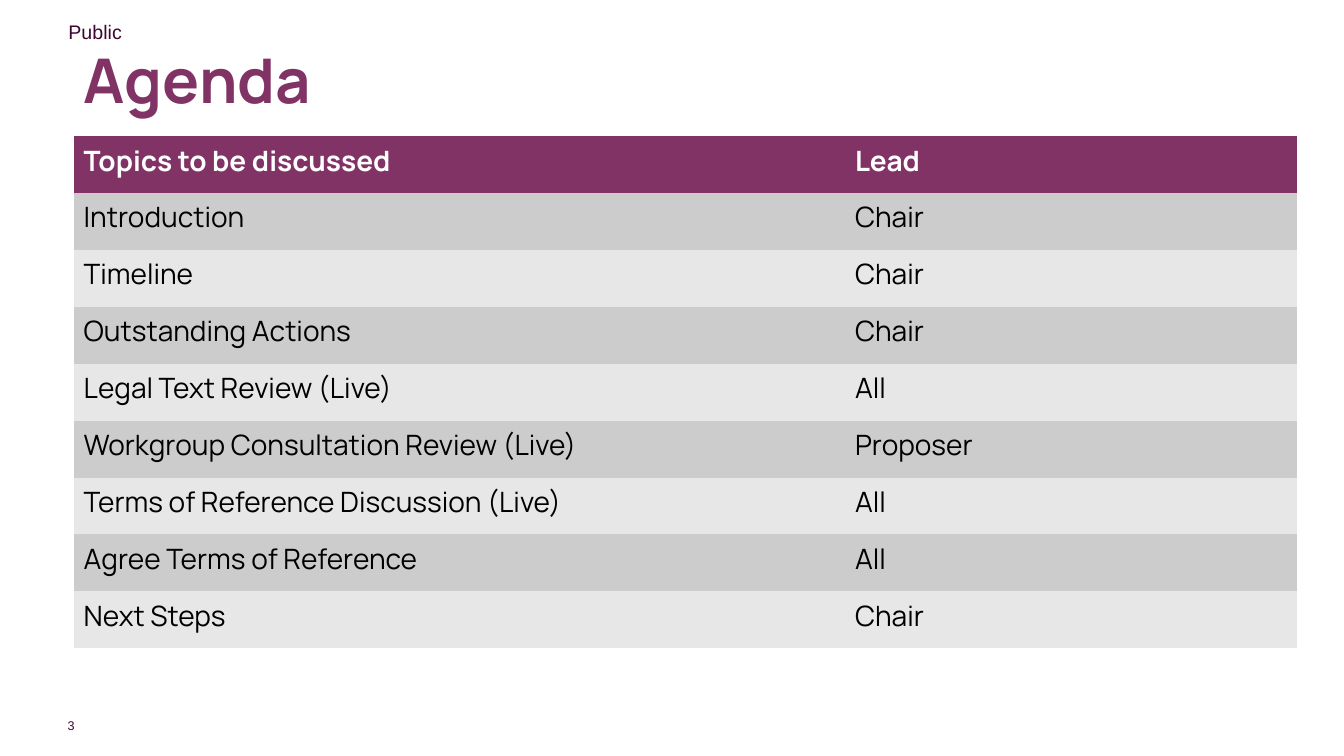
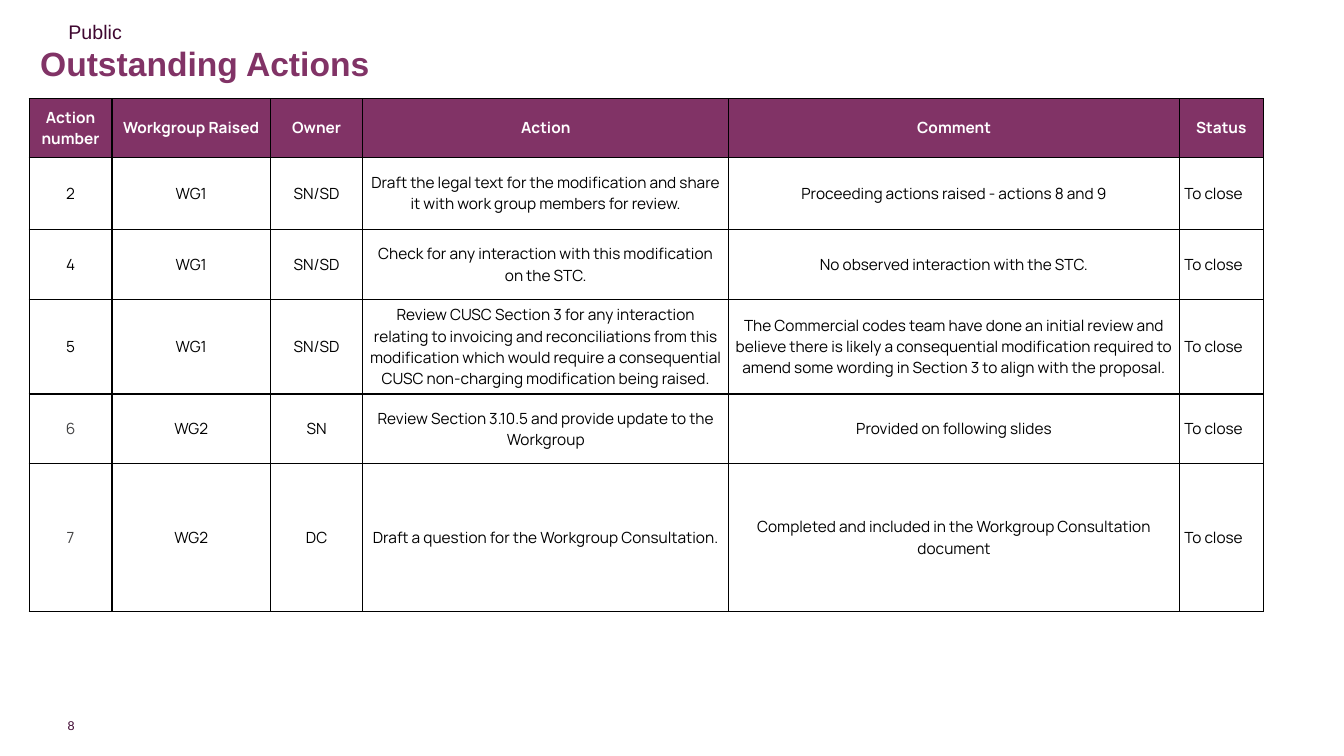
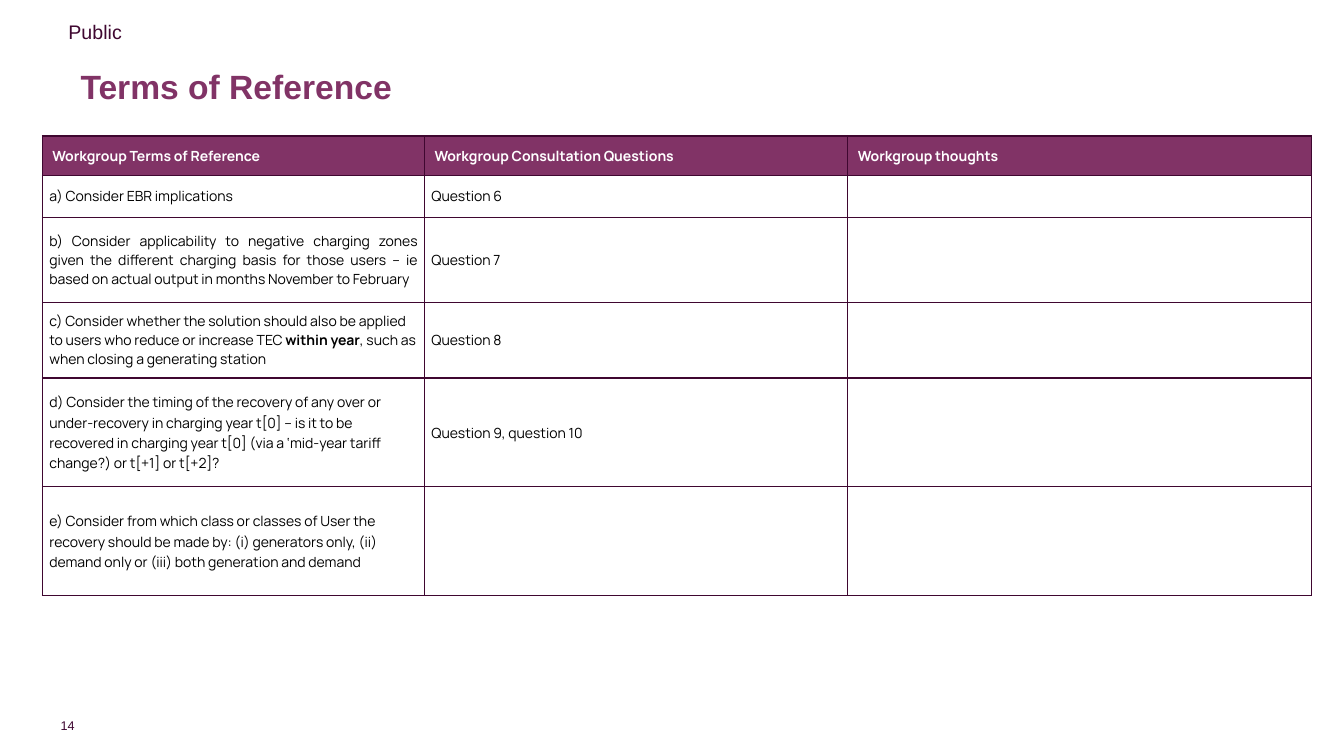
import dataclasses
import typing

import lxml.etree
import pptx
import pptx.dml.color
import pptx.enum.text
import pptx.oxml.ns
import pptx.util

Pt = pptx.util.Pt
Align = pptx.enum.text.PP_ALIGN
Anchor = pptx.enum.text.MSO_ANCHOR
AutoSize = pptx.enum.text.MSO_AUTO_SIZE
Values = dict[str, typing.Any]

# Shared palette, fonts and page size
PLUM, DEEP_PLUM, NUMBER_PLUM = "813366", "3F0730", "3F0731"
BLACK, WHITE, SLATE = "000000", "FFFFFF", "454546"
STRIPES = ("CCCCCC", "E7E7E7")
SANS, BRAND = "Arial", "Manrope"
PAGE_WIDTH, PAGE_HEIGHT = pptx.util.Inches(13.33), pptx.util.Inches(7.5)
NO_STYLE_NO_GRID = "{2D5ABB26-0587-4C30-8999-92F81FD0307C}"


@dataclasses.dataclass(frozen=True)
class Area:
    """A rectangle in percent of the slide's width and height."""
    left: float
    top: float
    width: float
    height: float


@dataclasses.dataclass(frozen=True)
class Look:
    """How a piece of text, or a table cell, is set."""
    size: float
    font: str = BRAND
    colour: str = BLACK
    bold: bool = False
    fill: str | None = None
    inset: tuple[float, float] = (0.1, 0.05)
    anchor: Anchor = Anchor.MIDDLE
    paragraph: Values = dataclasses.field(default_factory=dict)


@dataclasses.dataclass(frozen=True)
class Grid:
    """A table: corner, columns and rows in percent of the slide."""
    left: float
    top: float
    columns: list[float]
    rows: list[float]
    texts: list[tuple[str, ...]]
    look: typing.Callable[[int, int], Look]
    border: str | None = None


@dataclasses.dataclass(frozen=True)
class Page:
    number: int
    title: str
    title_area: Area
    title_look: Look
    grid: Grid


# Helpers
def across(share: float) -> int:
    return round(PAGE_WIDTH * share / 100)


def down(share: float) -> int:
    return round(PAGE_HEIGHT * share / 100)


def rgb(colour: str) -> pptx.dml.color.RGBColor:
    return pptx.dml.color.RGBColor.from_string(colour)


def assign(target: typing.Any, values: Values) -> None:
    for name, value in values.items():
        setattr(target, name, value)


def write(paragraph: typing.Any, text: str, look: Look) -> None:
    """Write text; parts between ** marks are bold."""
    assign(paragraph, look.paragraph)
    for index, part in enumerate(text.split("**")):
        run = paragraph.add_run()
        run.text = part
        assign(run.font, {"name": look.font, "size": Pt(look.size),
                          "bold": look.bold or index % 2 == 1})
        run.font.color.rgb = rgb(look.colour)


def margins(look: Look) -> Values:
    side, end = (pptx.util.Inches(inset) for inset in look.inset)
    return {"margin_left": side, "margin_right": side,
            "margin_top": end, "margin_bottom": end}


def add_text(slide: typing.Any, area: Area, text: str, look: Look,
             frame_values: Values) -> None:
    box = slide.shapes.add_textbox(across(area.left), down(area.top),
                                   across(area.width), down(area.height))
    assign(box.text_frame, {"word_wrap": True, "vertical_anchor": look.anchor,
                            **margins(look), **frame_values})
    write(box.text_frame.paragraphs[0], text, look)


def add_borders(cell: typing.Any, colour: str) -> None:
    qn = pptx.oxml.ns.qn
    properties = cell._tc.get_or_add_tcPr()
    for side in ("a:lnL", "a:lnR", "a:lnT", "a:lnB"):
        line = lxml.etree.SubElement(properties, qn(side), w=str(Pt(1)))
        solid = lxml.etree.SubElement(line, qn("a:solidFill"))
        lxml.etree.SubElement(solid, qn("a:srgbClr"), val=colour)


def add_grid(slide: typing.Any, grid: Grid) -> None:
    frame = slide.shapes.add_table(
        len(grid.rows), len(grid.columns), across(grid.left), down(grid.top),
        across(sum(grid.columns)), down(sum(grid.rows)))
    table = frame.table
    assign(table, {"first_row": False, "horz_banding": False})
    for style in table._tbl.iter(pptx.oxml.ns.qn("a:tableStyleId")):
        style.text = NO_STYLE_NO_GRID
    for column, share in zip(table.columns, grid.columns):
        column.width = across(share)
    for row, share in zip(table.rows, grid.rows):
        row.height = down(share)
    for r, texts in enumerate(grid.texts):
        for c, text in enumerate(texts):
            cell, look = table.cell(r, c), grid.look(r, c)
            assign(cell, {"vertical_anchor": look.anchor, **margins(look)})
            if grid.border:
                add_borders(cell, grid.border)
            if look.fill:
                cell.fill.solid()
                cell.fill.fore_color.rgb = rgb(look.fill)
            if text:
                write(cell.text_frame.paragraphs[0], text, look)


# Cell rules of the three tables
HEADER: Values = {"colour": WHITE, "bold": True, "fill": PLUM}


def agenda_look(row: int, column: int) -> Look:
    body = Look(20, anchor=Anchor.TOP, fill=STRIPES[(row + 1) % 2])
    return body if row else dataclasses.replace(body, **HEADER)


def actions_look(row: int, column: int) -> Look:
    centred = Look(11, inset=(0.05, 0.05), paragraph={"alignment": Align.CENTER})
    if row == 0:
        return dataclasses.replace(centred, **HEADER)
    if column == 5:
        return dataclasses.replace(centred, paragraph={"alignment": Align.LEFT})
    if column == 0 and row >= 4:
        return dataclasses.replace(centred, colour=SLATE)
    return centred


def terms_look(row: int, column: int) -> Look:
    if row == 0:
        return Look(10, paragraph={"alignment": Align.JUSTIFY}, **HEADER)
    if row <= 3:
        alignment = Align.JUSTIFY if row < 3 else Align.LEFT
        setting = {"alignment": alignment, "space_after": Pt(6)}
    else:
        setting = {"line_spacing": 1.07, "space_after": Pt(8)}
    return Look(10, inset=(0.07, 0), paragraph=setting)


# Content
AGENDA = Grid(5.48, 18, [57.39, 33.61], [7.53] * 9, [
    ("Topics to be discussed", "Lead"),
    ("Introduction", "Chair"),
    ("Timeline", "Chair"),
    ("Outstanding Actions", "Chair"),
    ("Legal Text Review (Live)", "All"),
    ("Workgroup Consultation Review (Live)", "Proposer"),
    ("Terms of Reference Discussion (Live)", "All"),
    ("Agree Terms of Reference", "All"),
    ("Next Steps", "Chair"),
], agenda_look)

ACTIONS = Grid(
    2.18, 13.07, [6.15, 11.8, 6.87, 27.23, 33.53, 6.23],
    [7.73, 9.6, 9.2, 12.53, 9.2, 19.6], [
        ("Action number", "Workgroup Raised", "Owner", "Action", "Comment",
         "Status"),
        ("2", "WG1", "SN/SD",
         "Draft the legal text for the modification and share it with work "
         "group members for review.",
         "Proceeding actions raised - actions 8 and 9", "To close"),
        ("4", "WG1", "SN/SD",
         "Check for any interaction with this modification on the STC.",
         "No observed interaction with the STC.", "To close"),
        ("5", "WG1", "SN/SD",
         "Review CUSC Section 3 for any interaction relating to invoicing and "
         "reconciliations from this modification which would require a "
         "consequential CUSC non-charging modification being raised.",
         "The Commercial codes team have done an initial review and believe "
         "there is likely a consequential modification required to amend some "
         "wording in Section 3 to align with the proposal.", "To close"),
        ("6", "WG2", "SN",
         "Review Section 3.10.5 and provide update to the Workgroup",
         "Provided on following slides", "To close"),
        ("7", "WG2", "DC", "Draft a question for the Workgroup Consultation.",
         "Completed and included in the Workgroup Consultation document",
         "To close"),
    ], actions_look, BLACK)

TERMS = Grid(
    3.15, 18, [28.43, 31.51, 34.51], [5.2, 5.6, 11.2, 10, 14.4, 14.4], [
        ("Workgroup Terms of Reference", "Workgroup Consultation Questions",
         "Workgroup thoughts"),
        ("a) Consider EBR implications", "Question 6", ""),
        ("b) Consider applicability to negative charging zones given the "
         "different charging basis for those users – ie based on actual "
         "output in months November to February", "Question 7", ""),
        ("c) Consider whether the solution should also be applied to users "
         "who reduce or increase TEC **within year**, such as when closing a "
         "generating station", "Question 8", ""),
        ("d) Consider the timing of the recovery of any over or "
         "under-recovery in charging year t[0] – is it to be recovered in "
         "charging year t[0] (via a ‘mid-year tariff change?) or t[+1] or "
         "t[+2]?", "Question 9, question 10", ""),
        ("e) Consider from which class or classes of User the recovery should "
         "be made by: (i) generators only, (ii) demand only or (iii) both "
         "generation and demand", "", ""),
    ], terms_look, DEEP_PLUM)

# Shared text styles and places
TITLE = Look(24, SANS, PLUM, bold=True, paragraph={"line_spacing": 0.9})
MARKING = Look(14, SANS, DEEP_PLUM, anchor=Anchor.TOP)
MARKING_AREA = Area(4.35, 2, 37.5, 4.53)
NUMBER = Look(9, SANS, NUMBER_PLUM, inset=(0, 0),
              paragraph={"alignment": Align.RIGHT, "space_after": Pt(12)})
NUMBER_AREA = Area(4.43, 94.93, 1.13, 2)
GROW: Values = {"auto_size": AutoSize.SHAPE_TO_FIT_TEXT}

PAGES = [
    Page(3, "Agenda", Area(5.48, 4.67, 79.67, 12.67),
         dataclasses.replace(TITLE, size=44, font=BRAND), AGENDA),
    Page(8, "Outstanding Actions", Area(2.25, 2.67, 78.54, 12), TITLE, ACTIONS),
    Page(14, "Terms of Reference", Area(5.25, 5.33, 79.67, 12.67), TITLE, TERMS),
]


def add_page(deck: typing.Any, page: Page) -> None:
    slide = deck.slides.add_slide(deck.slide_layouts[6])
    add_text(slide, NUMBER_AREA, str(page.number), NUMBER,
             {**GROW, "word_wrap": False})
    add_text(slide, MARKING_AREA, "Public", MARKING, GROW)
    add_text(slide, page.title_area, page.title, page.title_look, {})
    add_grid(slide, page.grid)


def main() -> None:
    deck = pptx.Presentation()
    assign(deck, {"slide_width": PAGE_WIDTH, "slide_height": PAGE_HEIGHT})
    for page in PAGES:
        add_page(deck, page)
    deck.save("out.pptx")


if __name__ == "__main__":
    main()
